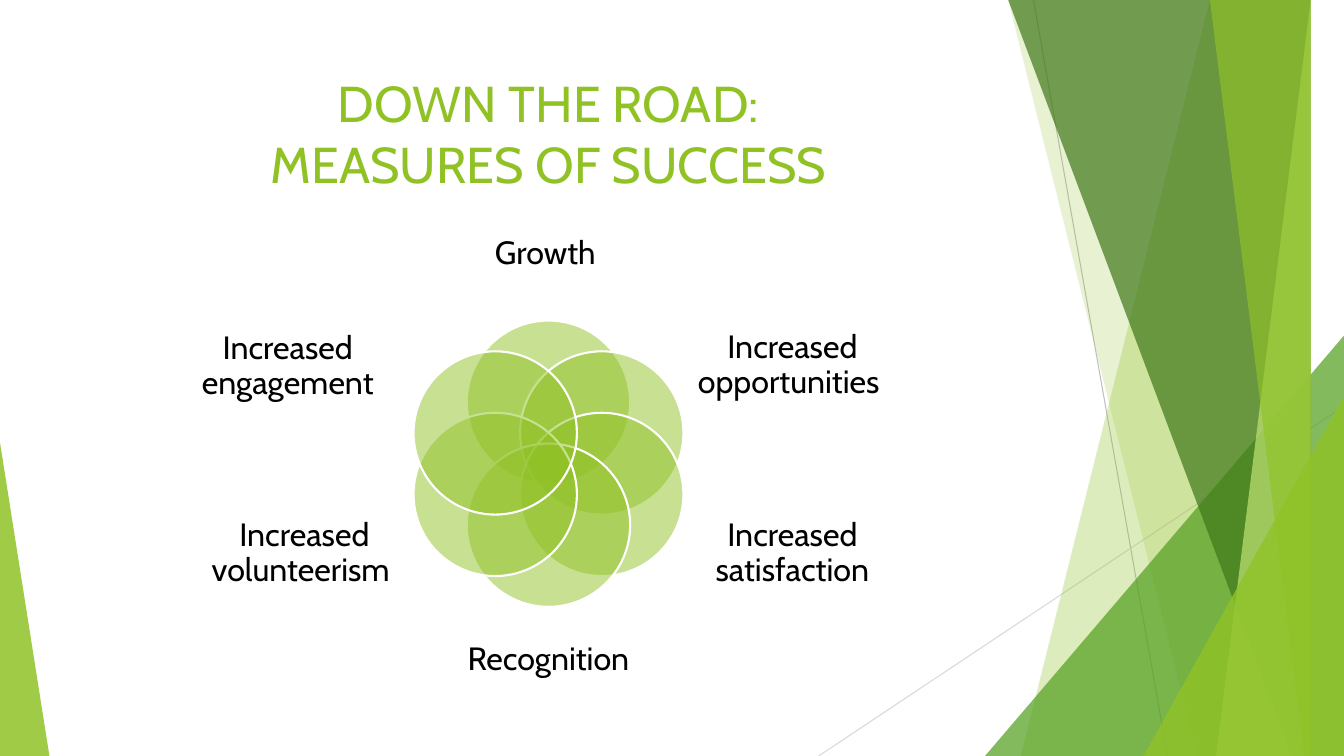
"""Build a slide with six overlapping circles that name the measures of success."""
import math

from lxml import etree
from pptx import Presentation
from pptx import util as u
from pptx.dml.color import RGBColor
from pptx.enum import shapes, text
from pptx.oxml.ns import qn

WIDTH, HEIGHT = 13.33, 7.5
FONT = "Cabin"
LIME = RGBColor(0x90, 0xC2, 0x26)
GREEN = RGBColor(0x54, 0xA0, 0x21)
FOREST = RGBColor(0x3F, 0x78, 0x19)
PALE = RGBColor(0xC0, 0xE4, 0x74)
GREY = RGBColor(0xBF, 0xBF, 0xBF)
LIGHT_GREY = RGBColor(0xD9, 0xD9, 0xD9)
WHITE = RGBColor(0xFF, 0xFF, 0xFF)
BLACK = RGBColor(0x00, 0x00, 0x00)

presentation = Presentation()
presentation.slide_width, presentation.slide_height = u.Inches(WIDTH), u.Inches(HEIGHT)
slide = presentation.slides.add_slide(presentation.slide_layouts[6])


def paint(shape, color, opacity):
    shape.shadow.inherit = False
    shape.fill.solid()
    shape.fill.fore_color.rgb = color
    shape.line.fill.background()
    color_element = shape.fill._xPr.find(qn("a:solidFill"))[0]
    etree.SubElement(color_element, qn("a:alpha"), val=str(opacity * 1000))


def write(words, box, size, color, anchor):
    frame = slide.shapes.add_textbox(*map(u.Inches, box)).text_frame
    frame.word_wrap = True
    frame.vertical_anchor = anchor
    frame.text = words
    paragraph = frame.paragraphs[0]
    paragraph.alignment = text.PP_ALIGN.CENTER
    paragraph.font.name = FONT
    paragraph.font.size = u.Pt(size)
    paragraph.font.color.rgb = color
    return frame


for start_x, start_y, end_x, color in [
    (10.25, 0, 11.58, GREY),
    (WIDTH, 4.03, 8.12, LIGHT_GREY),
]:
    ends = map(u.Inches, (start_x, start_y, end_x, HEIGHT))
    connector = slide.shapes.add_connector(shapes.MSO_CONNECTOR.STRAIGHT, *ends)
    connector.line.color.rgb = color
    connector.line.width = u.Pt(0.75)
    etree.SubElement(connector._element.spPr, qn("a:effectLst"))

BANDS = [
    (12.28, 10.04, LIME, 30),
    (10.5, 11.83, LIME, 20),
    (9.77, 3.33, 3.56, 1, GREEN, 72),
    (10.21, 12.91, FOREST, 70),
    (13.03, 11.92, PALE, 70),
    (11.96, 13.18, LIME, 65),
    (11.34, 3.93, 1.99, 1, LIME, 80),
    (0, 4.39, 0.49, 0, LIME, 85),
]
for *outline, color, opacity in BANDS:
    if len(outline) == 2:
        top_x, bottom_x = outline
        builder = slide.shapes.build_freeform(top_x, 0, scale=u.Inches(1))
        builder.add_line_segments([(WIDTH, 0), (WIDTH, HEIGHT), (bottom_x, HEIGHT)])
        band = builder.convert_to_shape()
    else:
        left, top, width, apex = outline
        box = map(u.Inches, (left, top, width, HEIGHT - top))
        band = slide.shapes.add_shape(shapes.MSO_SHAPE.ISOSCELES_TRIANGLE, *box)
        band.adjustments[0] = apex
    paint(band, color, opacity)

write("DOWN THE ROAD:\vMEASURES OF SUCCESS", (0.74, 0.67, 9.4, 1.44), 36, LIME, text.MSO_ANCHOR.TOP)

CENTER_X, CENTER_Y = 5.44, 4.6
RING, DIAMETER = 0.61, 1.62
MEASURES = [
    ("Growth ", (4.43, 1.97, 2.03, 1.11)),
    ("Increased opportunities ", (6.9, 3.02, 1.92, 1.21)),
    ("Increased satisfaction", (6.9, 4.82, 1.92, 1.35)),
    ("Recognition", (4.48, 5.87, 1.92, 1.35)),
    ("Increased volunteerism ", (2.06, 4.82, 1.92, 1.35)),
    ("Increased engagement", (1.84, 3.08, 2.03, 1.11)),
]
for index, (measure, box) in enumerate(MEASURES):
    angle = math.tau * index / len(MEASURES)
    left = CENTER_X + RING * math.sin(angle) - DIAMETER / 2
    top = CENTER_Y - RING * math.cos(angle) - DIAMETER / 2
    bounds = map(u.Inches, (left, top, DIAMETER, DIAMETER))
    circle = slide.shapes.add_shape(shapes.MSO_SHAPE.OVAL, *bounds)
    paint(circle, LIME, 50)
    circle.line.color.rgb = WHITE
    circle.line.width = u.Pt(1.5)
    frame = write(measure, box, 23, BLACK, text.MSO_ANCHOR.MIDDLE)
    frame.margin_left = frame.margin_right = frame.margin_top = frame.margin_bottom = 0
    frame.paragraphs[0].line_spacing = 0.9

presentation.save("out.pptx")
